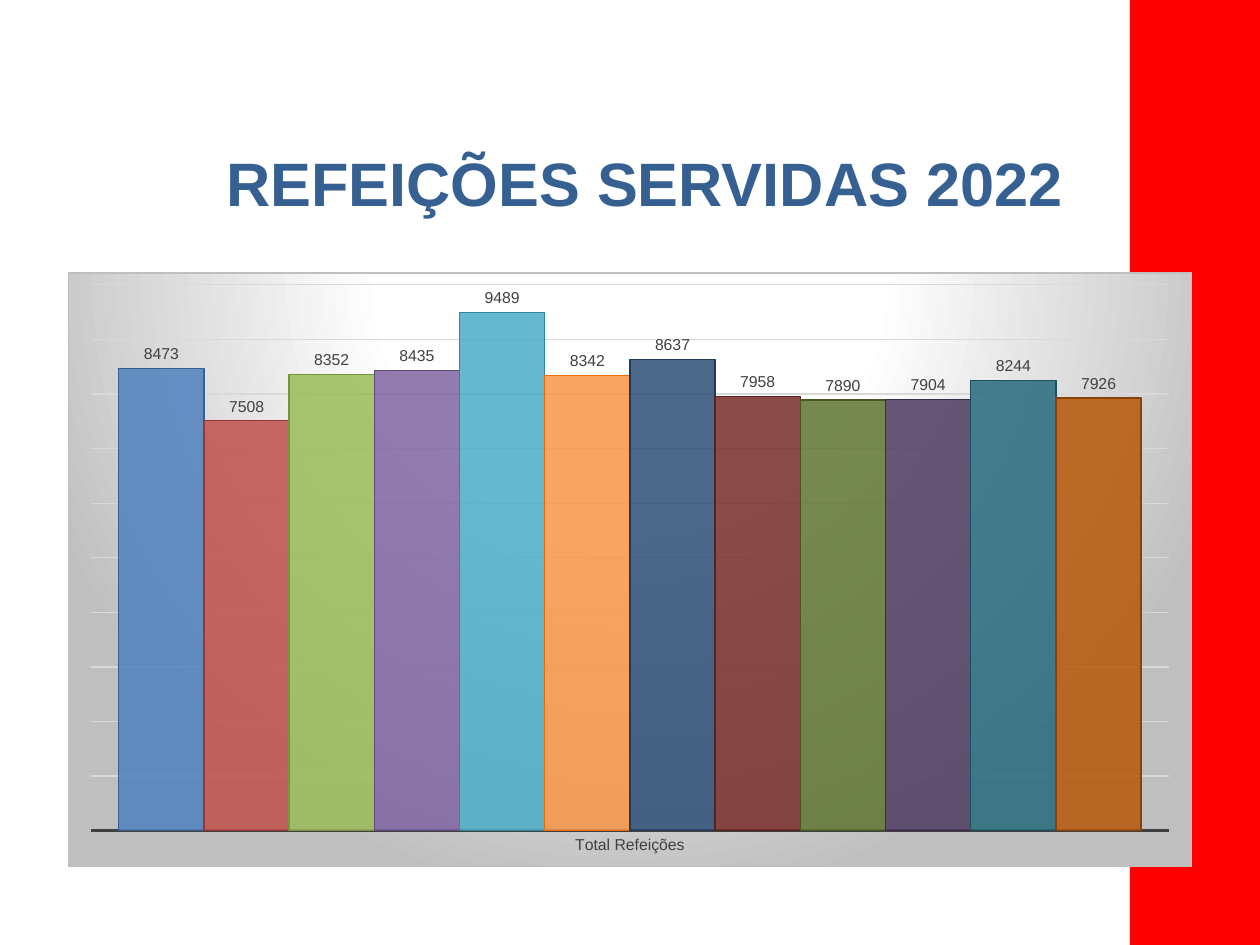
from lxml import etree
from pptx import Presentation
from pptx import util as u
from pptx.chart import data as chart_data
from pptx.dml import color
from pptx.enum import chart as kinds, shapes, text
from pptx.oxml import ns, parse_xml

FONT = "Arial"
COLORS = {
    "band": "FF0000",
    "title": "376092",
    "label": "404040",
    "grid": "D9D9D9",
    "light": "FFFFFF",
    "gray": "BFBFBF",
}
MEALS = [
    (8473, "4F81BD", "376092"),
    (7508, "C0504D", "953735"),
    (8352, "9BBB59", "77933C"),
    (8435, "8064A2", "604A7B"),
    (9489, "4BACC6", "31859C"),
    (8342, "F79646", "E46C0A"),
    (8637, "2C4D75", "213A58"),
    (7958, "772C2A", "592120"),
    (7890, "5F7530", "475824"),
    (7904, "4D3B62", "3A2C4A"),
    (8244, "276A7C", "1E505D"),
    (7926, "B65708", "894106"),
]


def set_font(font, size, shade):
    font.name = FONT
    font.size = u.Pt(size)
    font.color.rgb = color.RGBColor.from_string(shade)


def set_line(line, width, shade):
    line.width = u.Pt(width)
    line.color.rgb = color.RGBColor.from_string(shade)


deck = Presentation()
deck.slide_width, deck.slide_height = u.Cm(25.4), u.Cm(19.05)
page = deck.slides.add_slide(deck.slide_layouts[6])

band = page.shapes.add_shape(
    shapes.MSO_SHAPE.RECTANGLE, u.Cm(22.78), 0, u.Cm(2.62), deck.slide_height
)
band.shadow.inherit = False
band.fill.solid()
band.fill.fore_color.rgb = color.RGBColor.from_string(COLORS["band"])
band.line.fill.background()

title = page.shapes.add_textbox(u.Cm(3.78), u.Cm(2.84), u.Cm(18.44), u.Cm(2.21))
frame = title.text_frame
frame.word_wrap = True
frame.vertical_anchor = text.MSO_ANCHOR.TOP
frame.margin_top = u.Cm(0.25)
para = frame.paragraphs[0]
para.alignment = text.PP_ALIGN.CENTER
para.line_spacing = 0.9
span = para.add_run()
span.text = "REFEIÇÕES SERVIDAS 2022"
span.font.bold = True
set_font(span.font, 35, COLORS["title"])

meals = chart_data.CategoryChartData()
meals.categories = ["Total Refeições"]
for number, (value, _, _) in enumerate(MEALS, 1):
    meals.add_series(f"Series {number}", [value])
chart = page.shapes.add_chart(
    kinds.XL_CHART_TYPE.COLUMN_CLUSTERED,
    u.Cm(1.37), u.Cm(5.49), u.Cm(22.66), u.Cm(11.99), meals,
).chart
chart.has_title = False
chart.has_legend = False
set_font(chart.font, 10, "000000")

plot = chart.plots[0]
plot.gap_width = 65
plot.overlap = 0
plot.vary_by_categories = False
for series, (_, fill, edge) in zip(plot.series, MEALS):
    series.format.fill.solid()
    series.format.fill.fore_color.rgb = color.RGBColor.from_string(fill)
    shade = series.format.fill._xPr.find(".//" + ns.qn("a:srgbClr"))
    etree.SubElement(shade, ns.qn("a:alpha"), val="85000")
    set_line(series.format.line, 0.75, edge)
    labels = series.data_labels
    labels.show_value = True
    labels.position = kinds.XL_LABEL_POSITION.OUTSIDE_END
    set_font(labels.font, 9, COLORS["label"])

category_axis = chart.category_axis
category_axis.major_tick_mark = kinds.XL_TICK_MARK.NONE
category_axis.minor_tick_mark = kinds.XL_TICK_MARK.NONE
set_font(category_axis.tick_labels.font, 9, COLORS["label"])
set_line(category_axis.format.line, 1.5, COLORS["label"])

value_axis = chart.value_axis
value_axis.minimum_scale, value_axis.maximum_scale = 0, 10000
value_axis.major_unit = 1000
value_axis.has_major_gridlines = True
set_line(value_axis.major_gridlines.format.line, 0.75, COLORS["grid"])
value_axis.visible = False

chart_xml = chart._chartSpace.find(ns.qn("c:chart"))
plot_area = chart_xml.find(ns.qn("c:plotArea"))
old_layout = plot_area.find(ns.qn("c:layout"))
if old_layout is not None:
    plot_area.remove(old_layout)
plot_area.insert(0, parse_xml(
    f'<c:layout {ns.nsdecls("c")}><c:manualLayout><c:layoutTarget val="inner"/>'
    '<c:xMode val="edge"/><c:yMode val="edge"/><c:x val="0.02"/><c:y val="0.02"/>'
    '<c:w val="0.96"/><c:h val="0.92"/></c:manualLayout></c:layout>'
))

stops = "".join(
    f'<a:gs pos="{place * 1000}"><a:srgbClr val="{COLORS[name]}"/></a:gs>'
    for place, name in [(0, "light"), (39, "light"), (100, "gray")]
)
chart_xml.addnext(parse_xml(
    f'<c:spPr {ns.nsdecls("c", "a")}><a:gradFill><a:gsLst>{stops}</a:gsLst>'
    '<a:path path="circle"><a:fillToRect l="50000" t="-80000" r="50000" b="180000"/>'
    f'</a:path></a:gradFill><a:ln w="{u.Pt(0.75)}"><a:solidFill>'
    f'<a:srgbClr val="{COLORS["gray"]}"/></a:solidFill></a:ln></c:spPr>'
))

deck.save("out.pptx")
